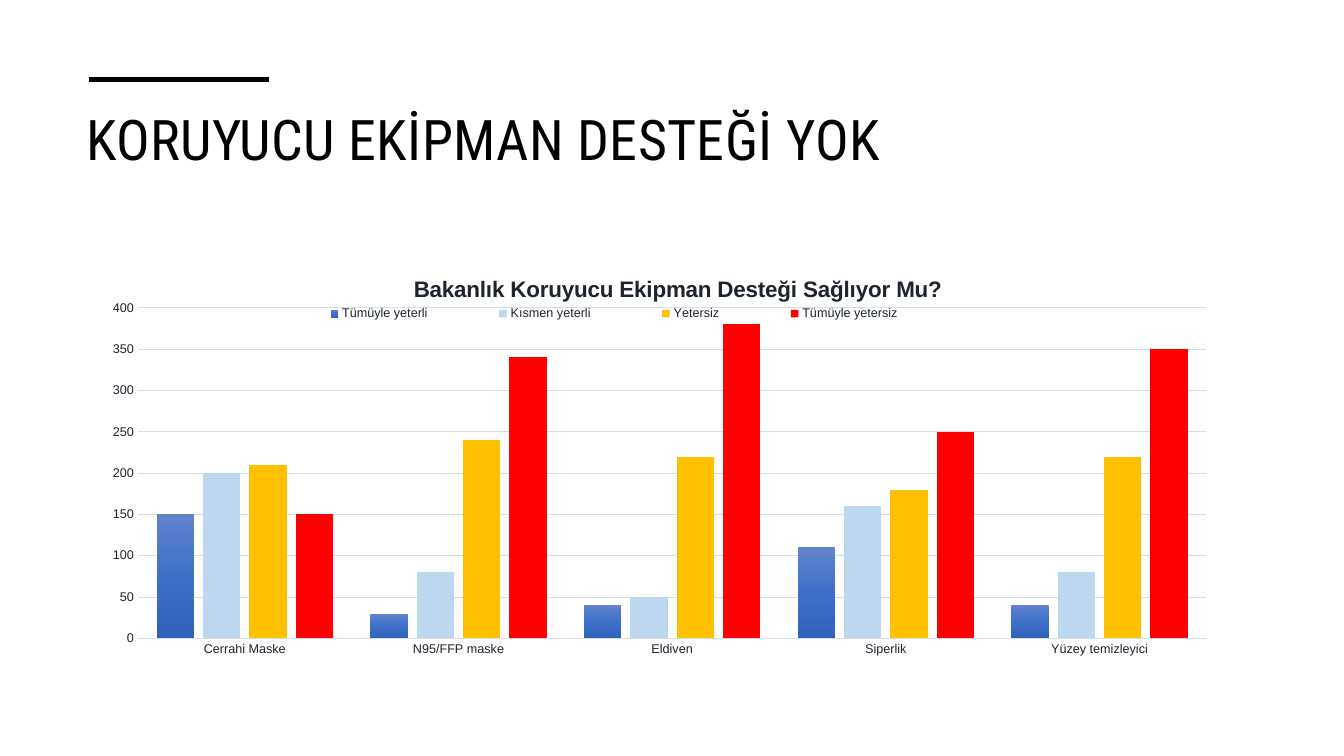
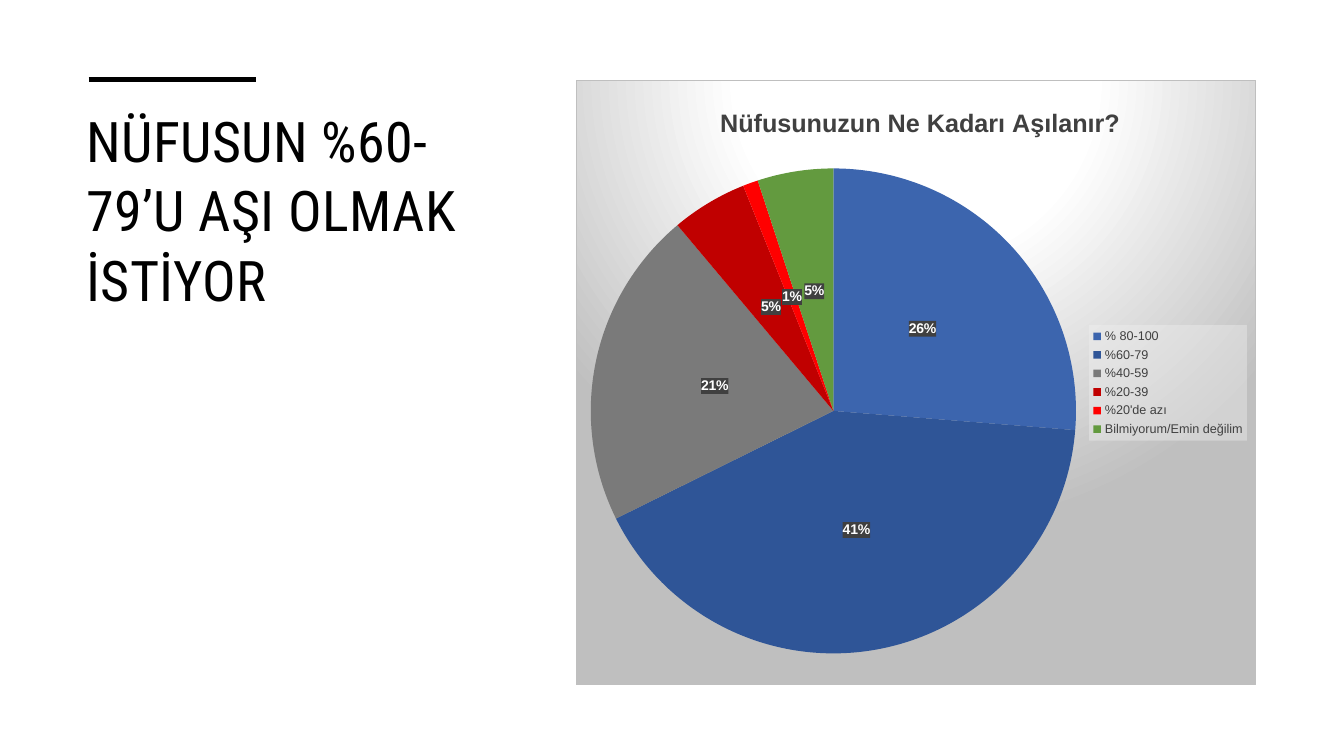
import pptx
import pptx.util
import pptx.dml.color
import pptx.chart.data
import pptx.enum.chart
import pptx.enum.shapes
import pptx.enum.text
import pptx.oxml
import pptx.oxml.ns

Inches, Pt = pptx.util.Inches, pptx.util.Pt
rgb = pptx.dml.color.RGBColor.from_string
qn = pptx.oxml.ns.qn
NS = pptx.oxml.ns.nsdecls("c", "a")

COLORS = {
    "black": "000000", "ink": "1D242E", "gray_text": "404040", "grid": "D7DDE6",
    "border": "BFBFBF", "legend_fill": "F2F2F2", "white": "FFFFFF",
    "light_blue": "BDD7EE", "amber": "FFC000", "red": "FF0000",
    "blue_top": "6183CB", "blue_mid": "3E70CA", "blue_low": "3062BB",
    "blue": "3C65AE", "navy": "2F5597", "gray": "7A7A7A",
    "dark_red": "C00000", "green": "639A3F",
}


def place(part, index, **fractions):
    """Give a chart part a manual layout, in fractions of the chart."""
    for old in part.findall(qn("c:layout")):
        part.remove(old)
    target = '<c:layoutTarget val="inner"/>' if part.tag == qn("c:plotArea") else ""
    modes = "".join(f'<c:{k}Mode val="edge"/>' for k in "xy")
    sizes = "".join(f'<c:{k} val="{v}"/>' for k, v in fractions.items())
    part.insert(index, pptx.oxml.parse_xml(
        f"<c:layout {NS}><c:manualLayout>{target}{modes}{sizes}</c:manualLayout></c:layout>"))


def shape_properties(fill, line="<a:ln><a:noFill/></a:ln>"):
    return pptx.oxml.parse_xml(f"<c:spPr {NS}>{fill}{line}</c:spPr>")


prs = pptx.Presentation()
prs.slide_width, prs.slide_height = Inches(13.33), Inches(7.5)

SLIDES = [
    {
        "heading": "KORUYUCU EKİPMAN DESTEĞİ YOK",
        "heading_box": (0.76, 0.97, 11.81, 1.15), "rule_end": 2.67,
        "kind": pptx.enum.chart.XL_CHART_TYPE.COLUMN_CLUSTERED,
        "chart_box": (0.88, 2.49, 11.62, 4.22),
        "question": "Bakanlık Koruyucu Ekipman Desteği Sağlıyor Mu?",
        "question_size": 16, "question_at": {"x": 0.274, "y": 0.047}, "ink": "ink",
        "plot": {"x": 0.042, "y": 0.134, "w": 0.912, "h": 0.777},
        "legend_side": pptx.enum.chart.XL_LEGEND_POSITION.TOP,
        "legend": {"x": 0.149, "y": 0.125, "w": 0.599, "h": 0.045},
        "categories": ["Cerrahi Maske", "N95/FFP maske", "Eldiven", "Siperlik",
                       "Yüzey temizleyici"],
        "series": {
            "Tümüyle yeterli": (150, 30, 40, 110, 40),
            "Kısmen yeterli": (200, 80, 50, 160, 80),
            "Yetersiz": (210, 240, 220, 180, 220),
            "Tümüyle yetersiz": (150, 340, 380, 250, 350),
        },
    },
    {
        "heading": "NÜFUSUN %60-79’U AŞI OLMAK İSTİYOR",
        "heading_box": (0.76, 0.99, 4.28, 4.35), "rule_end": 2.54,
        "kind": pptx.enum.chart.XL_CHART_TYPE.PIE,
        "chart_box": (5.71, 0.79, 6.75, 6.01),
        "question": "Nüfusunuzun Ne Kadarı Aşılanır?",
        "question_size": 18, "question_at": {"x": 0.205, "y": 0.036}, "ink": "gray_text",
        "plot": {"x": 0.021, "y": 0.146, "w": 0.715, "h": 0.802},
        "legend_side": pptx.enum.chart.XL_LEGEND_POSITION.RIGHT,
        "legend": {"x": 0.755, "y": 0.405, "w": 0.232, "h": 0.191},
        "categories": ["% 80-100", "%60-79", "%40-59", "%20-39", "%20'de azı",
                       "Bilmiyorum/Emin değilim"],
        "series": {"Series 1": (26, 41, 21, 5, 1, 5)},
    },
]

charts = []
for content in SLIDES:
    slide = prs.slides.add_slide(prs.slide_layouts[6])

    # Heading
    heading = slide.shapes.add_textbox(*map(Inches, content["heading_box"])).text_frame
    heading.word_wrap = True
    heading.vertical_anchor = pptx.enum.text.MSO_ANCHOR.TOP
    heading_run = heading.paragraphs[0].add_run()
    heading_run.text = content["heading"]
    heading_run.font.name = "Roboto Condensed"
    heading_run.font.size = Pt(40)
    heading_run.font.color.rgb = rgb(COLORS["black"])
    heading_run.font._element.set("spc", "30")
    heading.paragraphs[0].line_spacing = 1.03

    # Rule above the heading
    rule = slide.shapes.add_connector(
        pptx.enum.shapes.MSO_CONNECTOR.STRAIGHT,
        Inches(0.88), Inches(0.79), Inches(content["rule_end"]), Inches(0.79))
    rule.line.color.rgb = rgb(COLORS["black"])
    rule.line.width = Pt(3.5)
    rule._element.spPr.append(pptx.oxml.parse_xml(f"<a:effectLst {NS}/>"))

    # Chart with its title and legend
    answers = pptx.chart.data.CategoryChartData()
    answers.categories = content["categories"]
    for name, values in content["series"].items():
        answers.add_series(name, values)
    chart = slide.shapes.add_chart(
        content["kind"], *map(Inches, content["chart_box"]), answers).chart
    charts.append(chart)
    chart.font.name = "Arial"
    chart.font.size = Pt(10)
    chart.font.color.rgb = rgb(COLORS["black"])

    question = chart.chart_title.text_frame.paragraphs[0].add_run()
    question.text = content["question"]
    question.font.name = "Arial"
    question.font.size = Pt(content["question_size"])
    question.font.bold = True
    question.font.color.rgb = rgb(COLORS[content["ink"]])

    chart.has_legend = True
    chart.legend.position = content["legend_side"]
    chart.legend.include_in_layout = False
    chart.legend.font.name = "Arial"
    chart.legend.font.size = Pt(9)
    chart.legend.font.color.rgb = rgb(COLORS[content["ink"]])

    place(chart.chart_title._element, 1, **content["question_at"])
    place(chart.legend._element, 1, **content["legend"])
    place(chart._chartSpace.chart.plotArea, 0, **content["plot"])

equipment, vaccination = charts

# Equipment: bars
bars = equipment.plots[0]
bars.vary_by_categories = False
bars.gap_width, bars.overlap = 100, -24
for series, color in zip(bars.series, ("blue_mid", "light_blue", "amber", "red")):
    series.format.fill.solid()
    series.format.fill.fore_color.rgb = rgb(COLORS[color])
    series.invert_if_negative = False

# Equipment: shaded first series
stops = "".join(
    f'<a:gs pos="{pos}"><a:srgbClr val="{COLORS[color]}"/></a:gs>'
    for pos, color in ((0, "blue_top"), (50000, "blue_mid"), (100000, "blue_low")))
first_bars = bars.series[0]._element.spPr
first_bars.replace(first_bars.find(qn("a:solidFill")), pptx.oxml.parse_xml(
    f'<a:gradFill {NS}><a:gsLst>{stops}</a:gsLst><a:lin ang="5400000" scaled="0"/></a:gradFill>'))

# Equipment: axes
for axis in (equipment.category_axis, equipment.value_axis):
    axis.major_tick_mark = axis.minor_tick_mark = pptx.enum.chart.XL_TICK_MARK.NONE
    axis.tick_labels.font.name = "Arial"
    axis.tick_labels.font.size = Pt(9)
    axis.tick_labels.font.color.rgb = rgb(COLORS["ink"])
counts = equipment.value_axis
counts.minimum_scale, counts.maximum_scale, counts.major_unit = 0, 400, 50
counts.format.line.fill.background()
for line in (equipment.category_axis.format.line, counts.major_gridlines.format.line):
    line.color.rgb = rgb(COLORS["grid"])
    line.width = Pt(0.75)

# Vaccination: slices
pie = vaccination.plots[0]
pie.vary_by_categories = True
slice_colors = ("blue", "navy", "gray", "dark_red", "red", "green")
for index, color in enumerate(slice_colors):
    share = pie.series[0].points[index].format
    share.fill.solid()
    share.fill.fore_color.rgb = rgb(COLORS[color])
    share.line.fill.background()

# Vaccination: percentages on dark plates
percents = pie.series[0].data_labels
percents.show_percentage, percents.show_value = True, False
percents.number_format, percents.number_format_is_linked = "0%", False
percents.position = pptx.enum.chart.XL_LABEL_POSITION.CENTER
percents.font.name = "Arial"
percents.font.size = Pt(10)
percents.font.bold = True
percents.font.color.rgb = rgb(COLORS["white"])

plate, veil = (
    f'<a:solidFill><a:srgbClr val="{COLORS[color]}"><a:alpha val="{alpha}"/></a:srgbClr></a:solidFill>'
    for color, alpha in (("gray_text", 75000), ("legend_fill", 39000)))
percents._element.find(qn("c:txPr")).addprevious(shape_properties(plate))
vaccination.legend._element.find(qn("c:txPr")).addprevious(shape_properties(veil))

# Vaccination: spotlight background
stops = "".join(
    f'<a:gs pos="{pos}"><a:srgbClr val="{COLORS[color]}"/></a:gs>'
    for pos, color in ((0, "white"), (39000, "white"), (100000, "border")))
spotlight = (
    f'<a:gradFill><a:gsLst>{stops}</a:gsLst><a:path path="circle">'
    '<a:fillToRect l="50000" t="-80000" r="50000" b="180000"/></a:path></a:gradFill>')
frame = f'<a:ln w="9525"><a:solidFill><a:srgbClr val="{COLORS["border"]}"/></a:solidFill></a:ln>'
vaccination._chartSpace.chart.addnext(shape_properties(spotlight, frame))

prs.save("out.pptx")
